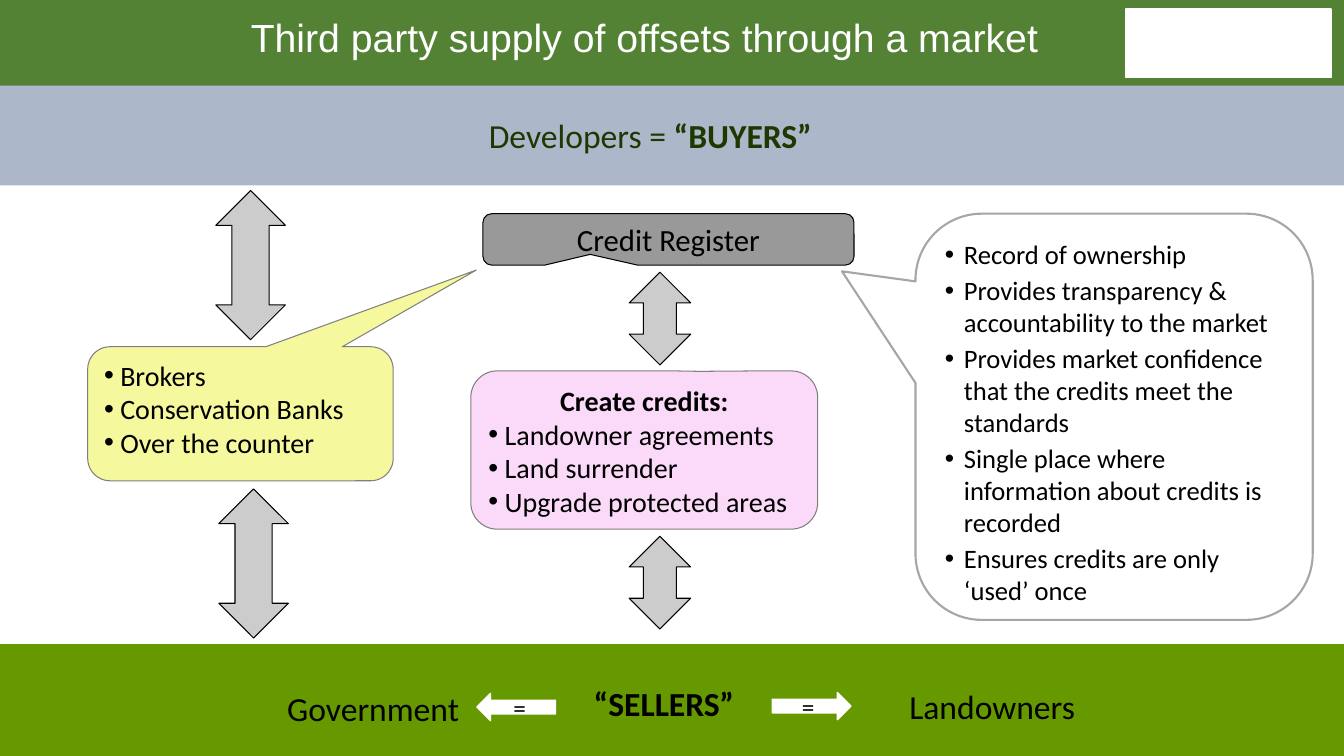
from dataclasses import dataclass

from lxml import etree
from pptx import Presentation
from pptx.dml.color import RGBColor
from pptx.enum import shapes, text
from pptx.oxml import ns
from pptx.util import Inches, Pt

SHAPE = shapes.MSO_SHAPE
CENTER, LEFT = text.PP_ALIGN.CENTER, text.PP_ALIGN.LEFT
TOP, MIDDLE = text.MSO_ANCHOR.TOP, text.MSO_ANCHOR.MIDDLE
Box = tuple[float, float, float, float]


@dataclass
class Line:
    plain: str = ""
    bold: str = ""
    indent: float = 0
    align: text.PP_ALIGN = LEFT
    space_before: float = 0


@dataclass
class Panel:
    box: Box
    kind: SHAPE
    fill: str = ""
    outline: str = ""
    weight: float = 0.75
    adjustments: tuple[float, ...] = ()
    lines: tuple[Line, ...] = ()
    size: float = 20
    anchor: text.MSO_ANCHOR = TOP
    margins: tuple[float, float] = (0.1, 0.05)


@dataclass
class Label:
    box: Box
    line: Line
    color: str = "000000"


def rgb(color: str) -> RGBColor:
    return RGBColor.from_string(color)


def add_bullet(paragraph, indent: float) -> None:
    properties = paragraph._p.get_or_add_pPr()
    properties.set("marL", str(Inches(indent)))
    properties.set("indent", str(-Inches(indent)))
    bullet_color = etree.SubElement(properties, ns.qn("a:buClr"))
    etree.SubElement(bullet_color, ns.qn("a:srgbClr"), val="000000")
    etree.SubElement(properties, ns.qn("a:buFont"), typeface="Arial")
    etree.SubElement(properties, ns.qn("a:buChar"), char="•")


def write(frame, lines: tuple[Line, ...], size: float, color: str = "000000",
          font: str = "Calibri", anchor=TOP, margins=(0.1, 0.05)) -> None:
    frame.word_wrap = True
    frame.auto_size = text.MSO_AUTO_SIZE.NONE
    frame.vertical_anchor = anchor
    frame.margin_left = frame.margin_right = Inches(margins[0])
    frame.margin_top = frame.margin_bottom = Inches(margins[1])
    for index, line in enumerate(lines):
        paragraph = frame.add_paragraph() if index else frame.paragraphs[0]
        if line.indent:
            add_bullet(paragraph, line.indent)
        paragraph.alignment = line.align
        paragraph.space_before = Pt(line.space_before)
        for words, bold in ((line.plain, False), (line.bold, True)):
            if words:
                run = paragraph.add_run()
                run.text = words
                run.font.name, run.font.size, run.font.bold = font, Pt(size), bold
                run.font.color.rgb = rgb(color)


def draw_panel(slide, panel: Panel) -> None:
    shape = slide.shapes.add_shape(panel.kind, *map(Inches, panel.box))
    shape.shadow.inherit = False
    for index, value in enumerate(panel.adjustments):
        shape.adjustments[index] = value
    if panel.fill:
        shape.fill.solid()
        shape.fill.fore_color.rgb = rgb(panel.fill)
    else:
        shape.fill.background()
    if panel.outline:
        shape.line.color.rgb = rgb(panel.outline)
        shape.line.width = Pt(panel.weight)
    else:
        shape.line.fill.background()
    if panel.lines:
        write(shape.text_frame, panel.lines, panel.size,
              anchor=panel.anchor, margins=panel.margins)


def draw_label(slide, label: Label) -> None:
    textbox = slide.shapes.add_textbox(*map(Inches, label.box))
    write(textbox.text_frame, (label.line,), 24, label.color)


def bullets(indent: float, gap: float, *items: str) -> tuple[Line, ...]:
    return tuple(Line(item, indent=indent, space_before=gap if index else 0)
                 for index, item in enumerate(items))


def exchange_arrow(left: float, top: float, width: float, height: float) -> Panel:
    return Panel((left, top, width, height), SHAPE.UP_DOWN_ARROW, "CCCCCC", "000000",
                 adjustments=(0.5, 0.534))


def equals_arrow(left: float, top: float, kind: SHAPE) -> Panel:
    return Panel((left, top, 0.78, 0.27), kind, "FFFFFF", "FFFFFF", 1,
                 lines=(Line("=", align=CENTER),), size=18, anchor=MIDDLE, margins=(0, 0))


CALLOUT = SHAPE.ROUNDED_RECTANGULAR_CALLOUT

PANELS = (
    # Bands and the blank plate at top right
    Panel((0, -0.03, 13.33, 0.9), SHAPE.RECTANGLE, "548235"),
    Panel((11.17, 0.09, 2.03, 0.68), SHAPE.RECTANGLE, "FFFFFF", "FFFFFF", 1),
    Panel((0, 0.85, 13.33, 0.99), SHAPE.RECTANGLE, "ACB8CA"),
    Panel((-0.18, 6.39, 13.61, 1.11), SHAPE.RECTANGLE, "669900"),
    # Callouts
    Panel((0.87, 3.44, 3.03, 1.33), CALLOUT, "F6F89E", "7F7F7F",
          adjustments=(0.772, -1.072, 0.167),
          lines=bullets(0.16, 0, "Brokers", "Conservation Banks", "Over the counter")),
    Panel((4.79, 2.12, 3.68, 0.51), CALLOUT, "999999", "000000",
          adjustments=(-0.211, 0.292, 0.167),
          lines=(Line("Credit Register", align=CENTER),), size=22),
    Panel((4.67, 3.68, 3.44, 1.57), CALLOUT, "FBD9F8", "7F7F7F",
          adjustments=(0.161, -0.497, 0.167),
          lines=(Line(bold="Create credits:", align=CENTER),
                 *bullets(0.16, 0, "Landowner agreements", "Land surrender",
                          "Upgrade protected areas"))),
    Panel((9.08, 2.12, 3.94, 4.03), CALLOUT, outline="A6A6A6", weight=1.5,
          adjustments=(-0.685, -0.358, 0.167), size=19,
          lines=bullets(0.19, 3, "Record of ownership",
                        "Provides transparency & accountability to the market",
                        "Provides market confidence that the credits meet the standards",
                        "Single place where information about credits is recorded",
                        "Ensures credits are only ‘used’ once")),
    # Arrows between buyers, register and sellers
    exchange_arrow(2.14, 1.89, 0.69, 1.48),
    exchange_arrow(2.17, 4.85, 0.69, 1.48),
    exchange_arrow(6.24, 2.7, 0.61, 0.92),
    exchange_arrow(6.24, 5.32, 0.61, 0.92),
    equals_arrow(4.73, 6.88, SHAPE.LEFT_ARROW),
    equals_arrow(7.66, 6.87, SHAPE.RIGHT_ARROW),
)

LABELS = (
    Label((4.75, 1.09, 3.72, 0.59), Line("Developers = ", "“BUYERS”"), "1D3801"),
    Label((2.75, 6.78, 3.05, 0.51), Line("Government")),
    Label((5.79, 6.73, 1.69, 0.5), Line(bold="“SELLERS”")),
    Label((8.92, 6.76, 2.83, 0.51), Line("Landowners")),
)


def main() -> None:
    presentation = Presentation()
    presentation.slide_width, presentation.slide_height = Inches(13.33), Inches(7.5)
    slide = presentation.slides.add_slide(presentation.slide_layouts[5])
    for panel in PANELS:
        draw_panel(slide, panel)
    for label in LABELS:
        draw_label(slide, label)

    # Title, brought in front of its band
    title = slide.shapes.title
    title.left, title.top, title.width, title.height = map(Inches, (0.07, 0.13, 12.64, 0.89))
    write(title.text_frame, (Line("Third party supply of offsets through a market",
                                  align=CENTER),), 28, "FFFFFF", "Arial")
    title.text_frame.paragraphs[0].line_spacing = 0.9
    slide.shapes.element.append(title.element)

    presentation.save("out.pptx")


if __name__ == "__main__":
    main()
